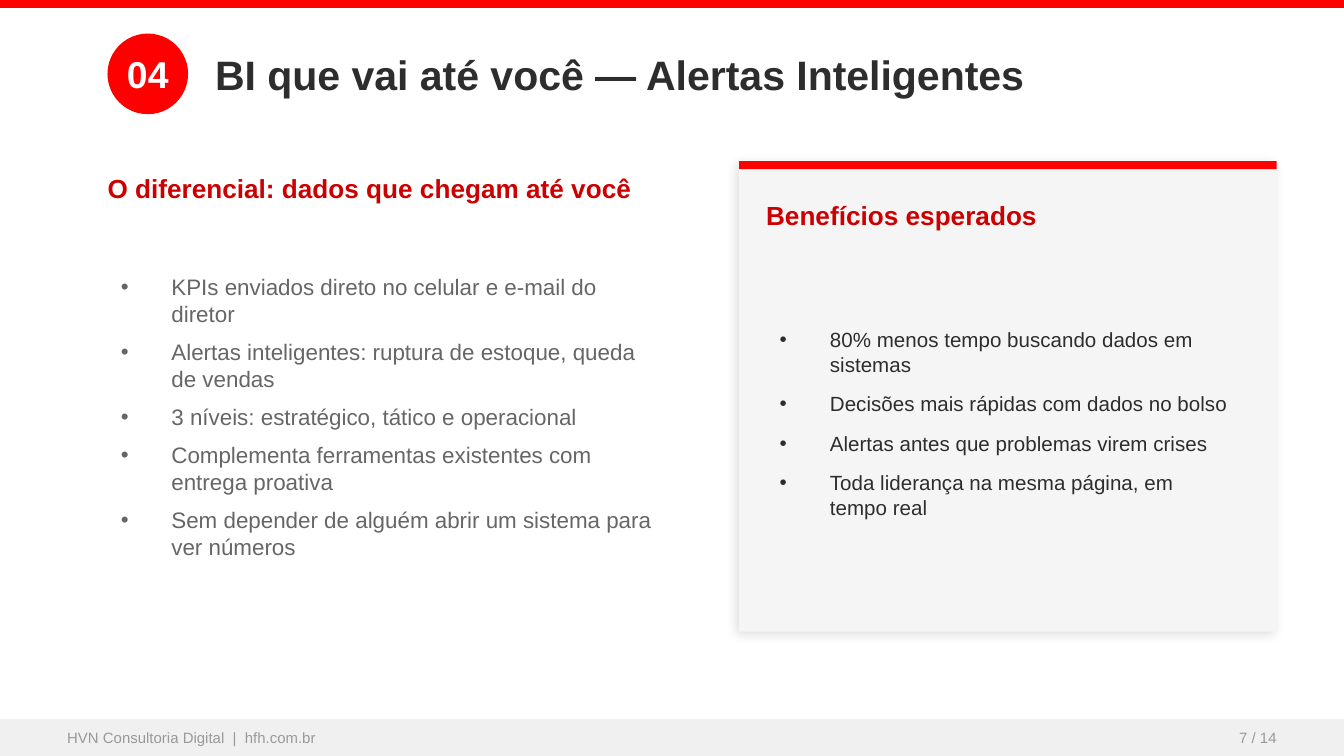
from lxml import etree
from pptx import Presentation
from pptx.dml.color import RGBColor
from pptx.enum.shapes import MSO_SHAPE
from pptx.enum.text import MSO_ANCHOR, MSO_AUTO_SIZE, PP_ALIGN
from pptx.oxml.ns import qn
from pptx.util import Inches, Pt

RECT, OVAL = MSO_SHAPE.RECTANGLE, MSO_SHAPE.OVAL
LEFT, CENTER, RIGHT = PP_ALIGN.LEFT, PP_ALIGN.CENTER, PP_ALIGN.RIGHT
MIDDLE, NO_FIT = MSO_ANCHOR.MIDDLE, MSO_AUTO_SIZE.NONE
COMPARISON_LAYOUT = 4
LIST_INDENT = Inches(3 / 8)

COLORS = {
    "red": "FF0000", "dark_red": "CC0000", "ink": "2D2D2D", "gray": "666666",
    "muted": "999999", "card": "F5F5F5", "footer": "F0F0F0",
    "white": "FFFFFF", "shadow": "000000",
}
FORMATS = {
    "badge": ({"size": Pt(20), "bold": True}, "white"),
    "title": ({"size": Pt(22), "bold": True}, "ink"),
    "heading": ({"size": Pt(14), "bold": True}, "dark_red"),
    "list": ({"size": Pt(12), "bold": False}, "gray"),
    "card_list": ({"size": Pt(11), "bold": False}, "ink"),
    "footer": ({"size": Pt(8), "bold": False}, "muted"),
}
FEATURES = [
    "KPIs enviados direto no celular e e-mail do diretor",
    "Alertas inteligentes: ruptura de estoque, queda de vendas",
    "3 níveis: estratégico, tático e operacional",
    "Complementa ferramentas existentes com entrega proativa",
    "Sem depender de alguém abrir um sistema para ver números",
]
BENEFITS = [
    "80% menos tempo buscando dados em sistemas",
    "Decisões mais rápidas com dados no bolso",
    "Alertas antes que problemas virem crises",
    "Toda liderança na mesma página, em tempo real",
]


def rgb(name):
    return RGBColor.from_string(COLORS[name])


def set_frame(tf, inset):
    values = {"word_wrap": True, "auto_size": NO_FIT, "vertical_anchor": MIDDLE}
    if not inset:
        values.update(dict.fromkeys(
            ("margin_left", "margin_top", "margin_right", "margin_bottom"), 0))
    for name, value in values.items():
        setattr(tf, name, value)


def write(p, text, style, align=LEFT, after=0):
    for name, value in {"alignment": align, "space_before": Pt(0),
                        "space_after": Pt(after)}.items():
        setattr(p, name, value)
    r = p.add_run()
    r.text = text
    values, color = FORMATS[style]
    for name, value in {"name": "Arial", **values}.items():
        setattr(r.font, name, value)
    r.font.color.rgb = rgb(color)


def add_bullet(p):
    pPr = p._p.get_or_add_pPr()
    pPr.set("marL", str(LIST_INDENT))
    pPr.set("indent", str(-LIST_INDENT))
    etree.SubElement(pPr, qn("a:buChar")).set("char", "•")


def add_block(s, shape, box, color):
    sp = s.shapes.add_shape(shape, *map(Inches, box))
    sp.shadow.inherit = False
    sp.fill.solid()
    sp.fill.fore_color.rgb = rgb(color)
    sp.line.fill.background()
    return sp


def add_soft_shadow(sp):
    effects = sp.element.spPr.find(qn("a:effectLst"))
    shadow = etree.SubElement(effects, qn("a:outerShdw"), {
        "blurRad": str(Pt(6)), "dist": str(Pt(2)), "dir": str(135 * 60000),
        "algn": "bl", "rotWithShape": "0"})
    color = etree.SubElement(shadow, qn("a:srgbClr"), val=COLORS["shadow"])
    etree.SubElement(color, qn("a:alpha"), val="12000")


def place(s, idx, box):
    sp = s.placeholders[idx]
    for name, value in zip(("left", "top", "width", "height"), box):
        setattr(sp, name, Inches(value))
    s.shapes.element.append(sp.element)
    return sp.text_frame


def add_heading(s, idx, box, text, style):
    tf = place(s, idx, box)
    set_frame(tf, inset=False)
    write(tf.paragraphs[0], text, style)


def add_list(s, idx, box, items, style, after):
    tf = place(s, idx, box)
    set_frame(tf, inset=True)
    for i, item in enumerate(items):
        p = tf.add_paragraph() if i else tf.paragraphs[0]
        add_bullet(p)
        write(p, item, style, after=after)


def add_badge(s, box, text):
    tf = add_block(s, OVAL, box, "red").text_frame
    set_frame(tf, inset=False)
    write(tf.paragraphs[0], text, "badge", CENTER)


def add_footer_text(s, box, text, align):
    tf = s.shapes.add_textbox(*map(Inches, box)).text_frame
    set_frame(tf, inset=False)
    write(tf.paragraphs[0], text, "footer", align)


def main():
    prs = Presentation()
    prs.slide_width, prs.slide_height = Inches(10), Inches(10 * 9 / 16)
    s = prs.slides.add_slide(prs.slide_layouts[COMPARISON_LAYOUT])

    add_block(s, RECT, (0, 0, 10, 0.06), "red")
    add_badge(s, (0.8, 0.25, 0.6, 0.6), "04")
    add_heading(s, 0, (1.6, 0.3, 7.5, 0.5),
                "BI que vai até você — Alertas Inteligentes", "title")

    add_heading(s, 1, (0.8, 1.2, 4.2, 0.4),
                "O diferencial: dados que chegam até você", "heading")
    add_list(s, 2, (0.8, 1.7, 4.2, 2.8), FEATURES, "list", 6)

    add_soft_shadow(add_block(s, RECT, (5.5, 1.2, 4, 3.5), "card"))
    add_block(s, RECT, (5.5, 1.2, 4, 0.06), "red")
    add_heading(s, 3, (5.7, 1.4, 3.6, 0.4), "Benefícios esperados", "heading")
    add_list(s, 4, (5.7, 1.9, 3.6, 2.5), BENEFITS, "card_list", 8)

    add_block(s, RECT, (0, 5.35, 10, 0.28), "footer")
    add_footer_text(s, (0.5, 5.35, 5, 0.28),
                    "HVN Consultoria Digital  |  hfh.com.br", LEFT)
    add_footer_text(s, (7.5, 5.35, 2, 0.28), "7 / 14", RIGHT)

    prs.save("out.pptx")


if __name__ == "__main__":
    main()
